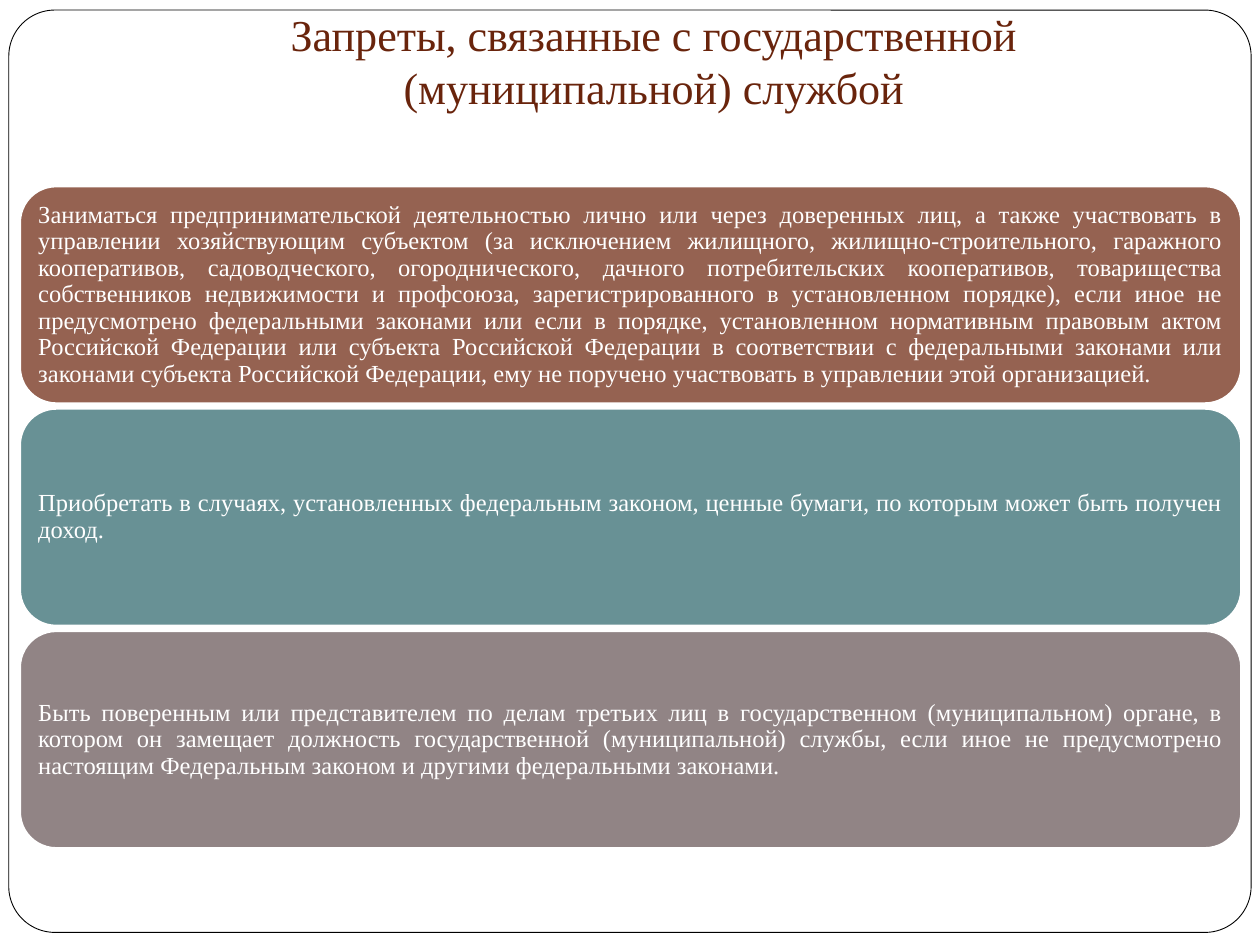
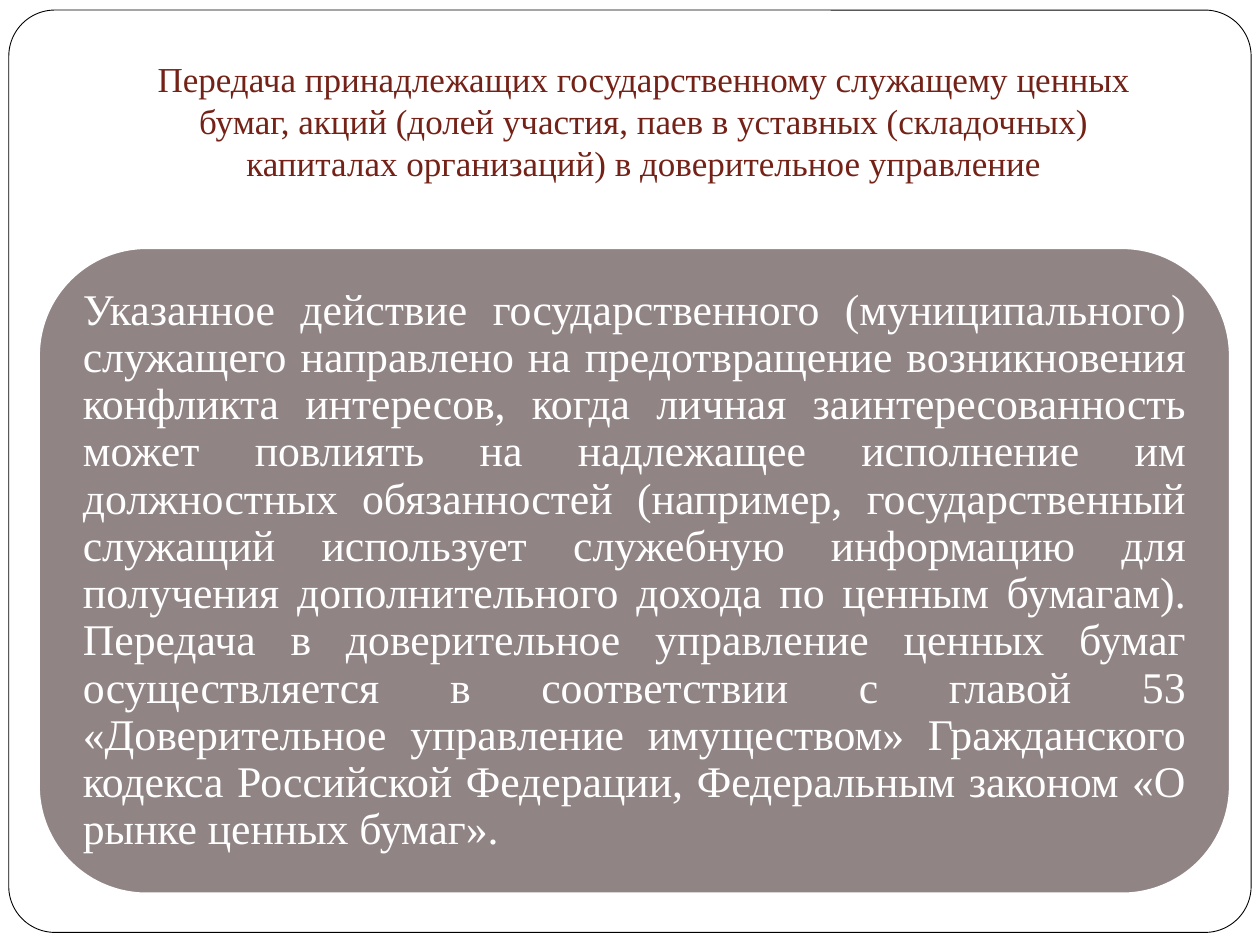
import dataclasses

import pptx
import pptx.dml.color
import pptx.enum.shapes
import pptx.enum.text
import pptx.util

Inches = pptx.util.Inches
ALIGN = pptx.enum.text.PP_ALIGN
ANCHOR = pptx.enum.text.MSO_ANCHOR


@dataclasses.dataclass(frozen=True)
class Theme:
    font: str = "Times New Roman"
    white: str = "FFFFFF"
    frame_line: str = "000000"
    brown: str = "956251"
    teal: str = "689195"
    mauve: str = "918485"
    ban_title: str = "69240C"
    trust_title: str = "742217"
    ban_title_size: float = 25.2
    trust_title_size: float = 20
    ban_size: float = 14
    trust_size: float = 25


THEME = Theme()

BAN_TITLE = "Запреты, связанные с государственной (муниципальной) службой"
BANS = [
    (THEME.brown,
     "Заниматься предпринимательской деятельностью лично или через доверенных "
     "лиц, а также участвовать в управлении хозяйствующим субъектом (за "
     "исключением жилищного, жилищно-строительного, гаражного кооперативов, "
     "садоводческого, огороднического, дачного потребительских кооперативов, "
     "товарищества собственников недвижимости и профсоюза, зарегистрированного "
     "в установленном порядке), если иное не предусмотрено федеральными "
     "законами или если в порядке, установленном нормативным правовым актом "
     "Российской Федерации или субъекта Российской Федерации в соответствии с "
     "федеральными законами или законами субъекта Российской Федерации, ему не "
     "поручено участвовать в управлении этой организацией."),
    (THEME.teal,
     "Приобретать в случаях, установленных федеральным законом, ценные бумаги, "
     "по которым может быть получен доход."),
    (THEME.mauve,
     "Быть поверенным или представителем по делам третьих лиц в "
     "государственном (муниципальном) органе, в котором он замещает должность "
     "государственной (муниципальной) службы, если иное не предусмотрено "
     "настоящим Федеральным законом и другими федеральными законами."),
]
TRUST_TITLE = (
    "Передача принадлежащих государственному служащему ценных бумаг, акций "
    "(долей участия, паев в уставных (складочных) капиталах организаций) в "
    "доверительное управление")
TRUST_TEXT = (
    "Указанное действие государственного (муниципального) служащего направлено "
    "на предотвращение возникновения конфликта интересов, когда личная "
    "заинтересованность может повлиять на надлежащее исполнение им должностных "
    "обязанностей (например, государственный служащий использует служебную "
    "информацию для получения дополнительного дохода по ценным бумагам). "
    "Передача в доверительное управление ценных бумаг осуществляется в "
    "соответствии с главой 53 «Доверительное управление имуществом» "
    "Гражданского кодекса Российской Федерации, Федеральным законом «О рынке "
    "ценных бумаг».")


def set_format(target, values):
    for name, value in values.items():
        setattr(target, name, value)


def rgb(color):
    return pptx.dml.color.RGBColor.from_string(color)


def write_text(shape, text, size, color, margins, anchor, paragraph_format):
    """Fill a shape with one paragraph; margins are left, top, right, bottom."""
    left, top, right, bottom = map(Inches, margins)
    frame = shape.text_frame
    set_format(frame, {
        "word_wrap": True, "vertical_anchor": anchor,
        "margin_left": left, "margin_top": top,
        "margin_right": right, "margin_bottom": bottom,
    })
    paragraph = frame.paragraphs[0]
    set_format(paragraph, paragraph_format)
    run = paragraph.add_run()
    run.text = text
    set_format(run.font, {"name": THEME.font, "size": pptx.util.Pt(size)})
    run.font.color.rgb = rgb(color)


def add_rounded(slide, box, fill, line, line_width):
    shape = slide.shapes.add_shape(
        pptx.enum.shapes.MSO_SHAPE.ROUNDED_RECTANGLE, *map(Inches, box))
    shape.shadow.inherit = False
    shape.fill.solid()
    shape.fill.fore_color.rgb = rgb(fill)
    shape.line.color.rgb = rgb(line)
    shape.line.width = pptx.util.Pt(line_width)
    return shape


def add_panel(slide, box, fill, text, size, margin):
    panel = add_rounded(slide, box, fill, THEME.white, 1)
    write_text(panel, text, size, THEME.white, [margin] * 4, ANCHOR.MIDDLE,
               {"alignment": ALIGN.JUSTIFY, "line_spacing": 0.9})


def add_title(slide, box, text, size, color):
    title = slide.shapes.add_textbox(*map(Inches, box))
    write_text(title, text, size, color, (0.1, 0.05, 0.1, 0.1), ANCHOR.BOTTOM,
               {"alignment": ALIGN.CENTER})


def add_framed_slide(presentation):
    slide = presentation.slides.add_slide(presentation.slide_layouts[6])
    frame = add_rounded(slide, (0.07, 0.08, 9.86, 7.32),
                        THEME.white, THEME.frame_line, 0.5)
    frame.adjustments[0] = 0.05
    return slide


def build_bans(presentation):
    slide = add_framed_slide(presentation)
    top, height, gap = 1.48, 1.72, 0.045
    for index, (fill, text) in enumerate(BANS):
        box = (0.16, top + index * (height + gap), 9.69, height)
        add_panel(slide, box, fill, text, THEME.ban_size, 0.06)
    add_title(slide, (0.94, 0.31, 8.5, 0.69), BAN_TITLE,
              THEME.ban_title_size, THEME.ban_title)


def build_trust(presentation):
    slide = add_framed_slide(presentation)
    add_title(slide, (0.86, 0.31, 8.5, 1.25), TRUST_TITLE,
              THEME.trust_title_size, THEME.trust_title)
    add_panel(slide, (0.31, 1.97, 9.45, 5.12), THEME.mauve, TRUST_TEXT,
              THEME.trust_size, 0.1)


def main():
    presentation = pptx.Presentation()
    set_format(presentation, {"slide_width": Inches(10),
                              "slide_height": Inches(7.5)})
    build_bans(presentation)
    build_trust(presentation)
    presentation.save("out.pptx")


if __name__ == "__main__":
    main()
